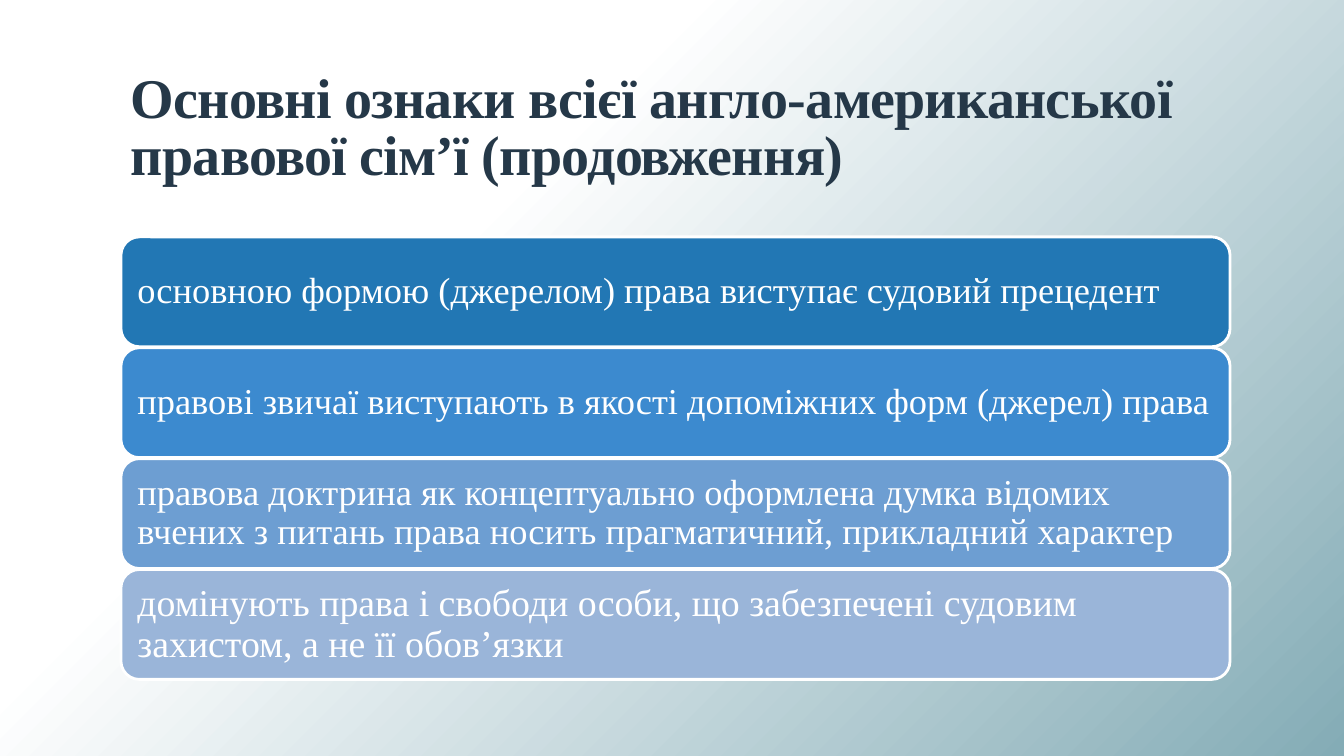
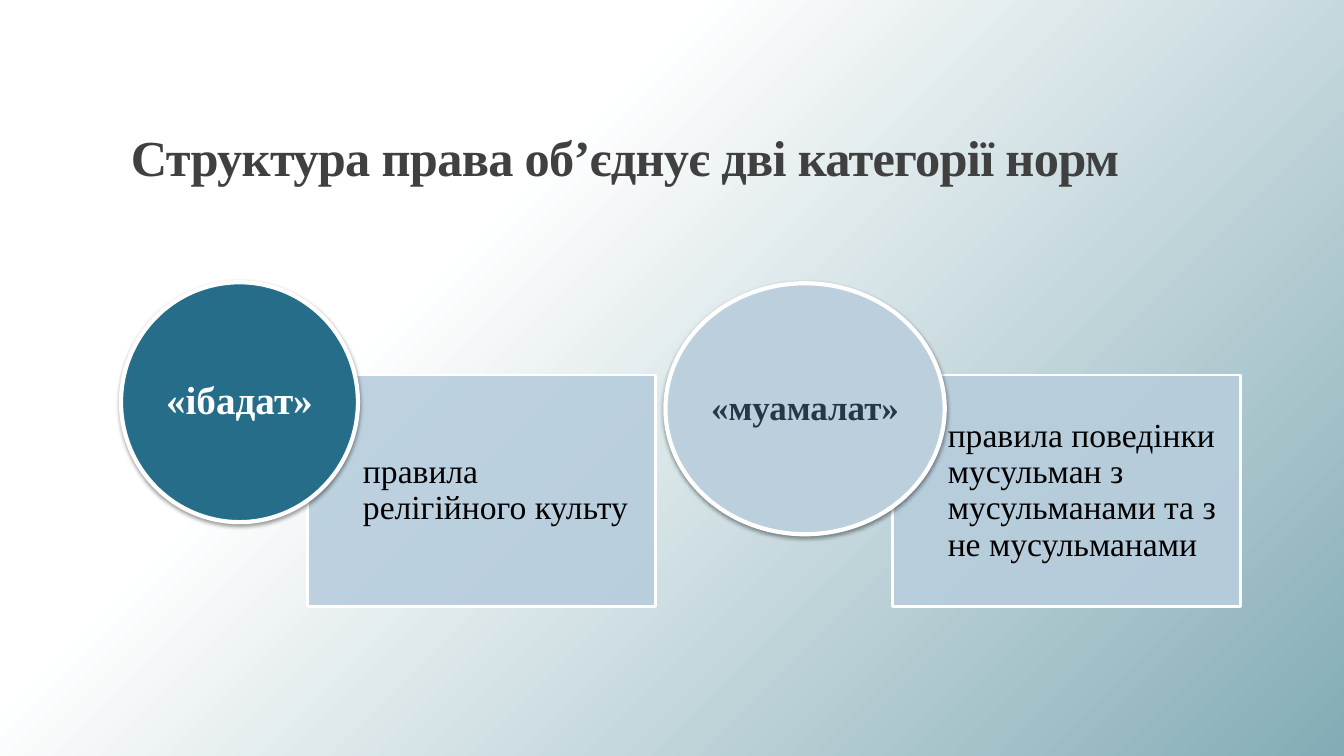
import copy

import pptx
import pptx.dml.color
import pptx.enum.shapes
import pptx.enum.text
import pptx.oxml
import pptx.oxml.ns
import pptx.util

Inches = pptx.util.Inches
Pt = pptx.util.Pt
Shape = pptx.enum.shapes.MSO_SHAPE
Anchor = pptx.enum.text.MSO_ANCHOR
Align = pptx.enum.text.PP_ALIGN
qn = pptx.oxml.ns.qn

FONT = "Times New Roman"
WHITE, BLACK, NAVY, GRAY = "FFFFFF", "000000", "253848", "404040"
PALE, TEAL = "B7CDDD", "266D8A"
STOPS = [(0, WHITE), (0.33, WHITE), (1, "84ACB6")]


def paint(color, code):
    color.rgb = pptx.dml.color.RGBColor.from_string(code)


def node(tag, **attrs):
    item = pptx.oxml.parse_xml(f"<a:{tag} {pptx.oxml.ns.nsdecls('a')}/>")
    for name, value in attrs.items():
        item.set(name, str(value))
    return item


class Deck:
    """Holds the shared style and the current slide."""

    def __init__(self):
        self.show = pptx.Presentation()
        self.show.slide_width = Inches(13.33)
        self.show.slide_height = Inches(7.5)
        self.slide = None
        self.backdrop()

    def backdrop(self):
        master = self.show.slide_master
        fill = master.background.fill
        fill.gradient()
        fill.gradient_angle = 315
        group = master.element.find(".//" + qn("a:gsLst"))
        group.append(copy.deepcopy(group[-1]))
        for stop, (place, code) in zip(fill.gradient_stops, STOPS):
            stop.position = place
            paint(stop.color, code)

    def page(self, title, size, color):
        self.slide = self.show.slides.add_slide(self.show.slide_layouts[6])
        box = self.slide.shapes.add_textbox(
            Inches(1.2), Inches(0.31), Inches(11), Inches(1.59))
        para = self.label(box, title, size, color, bold=True,
                          pads=(0.1, 0.05, 0.1, 0.05),
                          anchor=Anchor.BOTTOM, lead=0.85)
        para._p.pPr.find(qn("a:defRPr")).set("spc", "-50")

    def label(self, shape, text, size, color, bold=False, pads=(0, 0, 0, 0),
              anchor=Anchor.MIDDLE, align=Align.LEFT, lead=0.9):
        frame = shape.text_frame
        frame.word_wrap = True
        frame.vertical_anchor = anchor
        (frame.margin_left, frame.margin_top,
         frame.margin_right, frame.margin_bottom) = map(Inches, pads)
        para = frame.paragraphs[0]
        para.text = text
        para.alignment = align
        para.line_spacing = lead
        font = para.font
        font.name, font.size, font.bold = FONT, Pt(size), bold
        paint(font.color, color)
        return para

    def block(self, kind, place, fill, line=2):
        shape = self.slide.shapes.add_shape(kind, *map(Inches, place))
        shape.fill.solid()
        paint(shape.fill.fore_color, fill)
        paint(shape.line.color, WHITE)
        shape.line.width = Pt(line)
        shape.shadow.inherit = False
        return shape

    def bar(self, top, text, size, fill):
        shape = self.block(Shape.ROUNDED_RECTANGLE, (1.2, top, 11, 1.09), fill)
        self.label(shape, text, size, WHITE, pads=(0.11,) * 4)

    def panel(self, left, text):
        shape = self.block(Shape.RECTANGLE, (left, 3.72, 3.45, 2.3), PALE)
        tint = shape._element.spPr.find(qn("a:solidFill"))[0]
        tint.append(node("alpha", val=90000))
        self.label(shape, text, 24, BLACK, pads=(0.55, 0.19, 0.19, 0.19))

    def disc(self, place, text, size, fill, color):
        shape = self.block(Shape.OVAL, place, fill, line=3)
        shadow = node("outerShdw", blurRad=Pt(3.1), dist=Pt(1.6),
                      dir=5400000, algn="ctr", rotWithShape=0)
        shade = node("srgbClr", val=BLACK)
        shade.append(node("alpha", val=38000))
        shadow.append(shade)
        shape._element.spPr.find(qn("a:effectLst")).append(shadow)
        self.label(shape, text, size, color, bold=True, align=Align.CENTER)


def main():
    deck = Deck()

    deck.page("Основні ознаки всієї англо-американської правової сім’ї "
              "(продовження)", 40, NAVY)
    bars = [
        ("основною формою (джерелом) права виступає судовий прецедент",
         26, "2277B4"),
        ("правові звичаї виступають в якості допоміжних форм (джерел) права",
         26, "3C8ACF"),
        ("правова доктрина як концептуально оформлена думка відомих вчених "
         "з питань права носить прагматичний, прикладний характер",
         26, "6D9ED2"),
        ("домінують права і свободи особи, що забезпечені судовим захистом, "
         "а не її обов’язки", 27, "9AB5D9"),
    ]
    for row, (text, size, fill) in enumerate(bars):
        deck.bar(2.35 + 1.1 * row, text, size, fill)

    deck.page("Структура права об’єднує дві категорії норм", 36, GRAY)
    deck.panel(3.05, "правила релігійного культу")
    deck.disc((1.2, 2.8, 2.35, 2.38), "«ібадат»", 28, TEAL, WHITE)
    deck.panel(8.85, "правила поведінки мусульман з мусульманами "
                     "та з не мусульманами")
    deck.disc((6.6, 2.81, 2.77, 2.49), "«муамалат»", 25, "BBCFDD", NAVY)

    deck.show.save("out.pptx")


if __name__ == "__main__":
    main()
